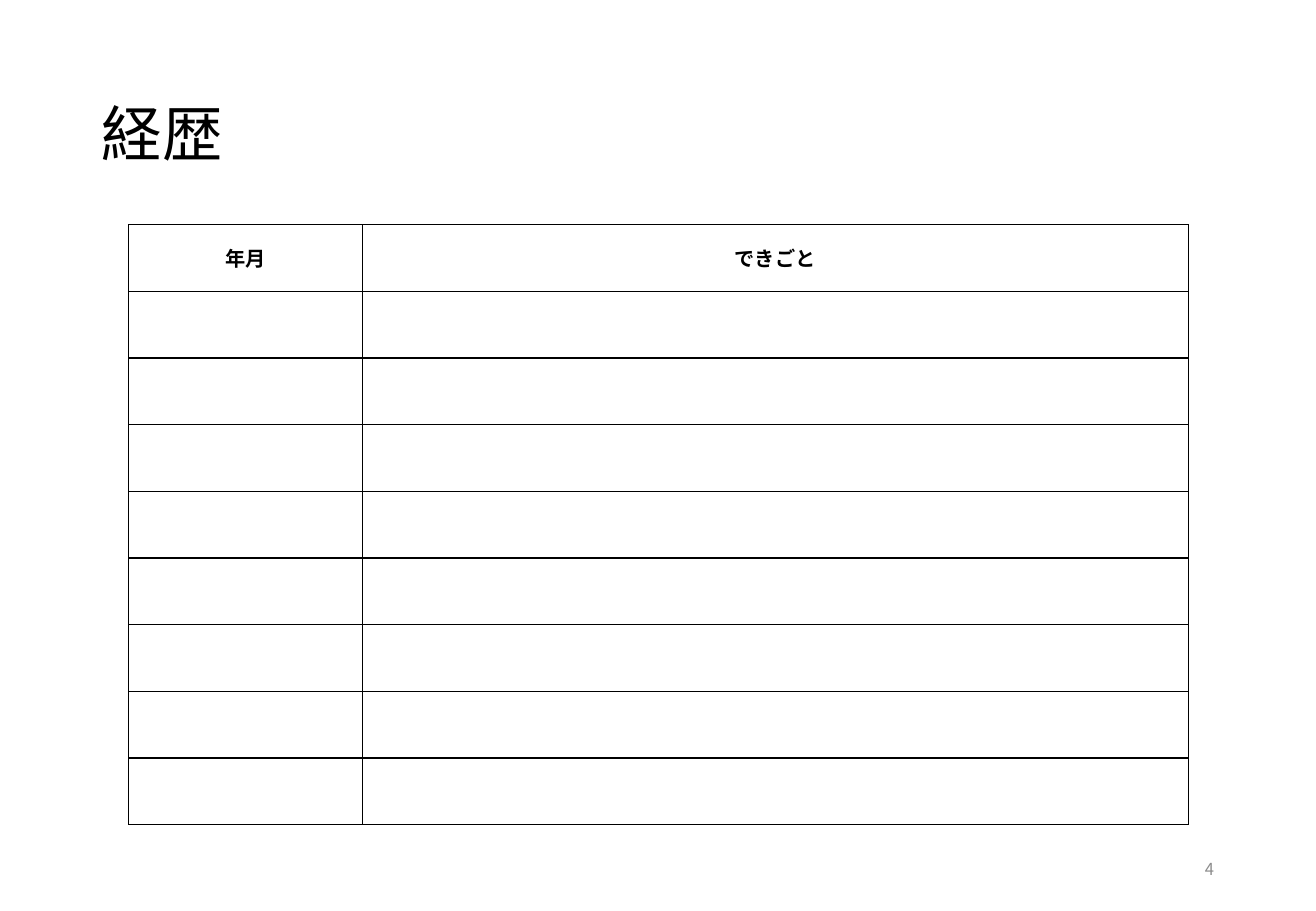
from dataclasses import dataclass

from lxml.etree import SubElement
from pptx import Presentation
from pptx.dml.color import RGBColor
from pptx.enum.text import MSO_ANCHOR as Anchor, PP_ALIGN as Align
from pptx.oxml import parse_xml
from pptx.oxml.ns import nsdecls, qn
from pptx.util import Inches, Pt


@dataclass(frozen=True)
class Theme:
    font: str = "Noto Sans CJK JP"
    ink: str = "000000"
    muted: str = "8C8C8C"
    paper: str = "FFFFFF"
    title_size: float = 35.8
    header_size: float = 12
    number_size: float = 9.8
    border_width: float = 0.75


THEME = Theme()
SLIDE_WIDTH, SLIDE_HEIGHT = 10.83, 7.5

# Table grid, in inches
TABLE_LEFT, TABLE_TOP, TABLE_HEIGHT = 1.06, 1.85, 4.94
COLUMN_WIDTHS = (1.92, 6.8)
HEADERS = ("年月", "できごと")
ROW_COUNT = 9


def format_text(text_frame, size, color, align, bold=False):
    """Style the only paragraph of a text frame."""
    paragraph = text_frame.paragraphs[0]
    paragraph.alignment = align
    for run in paragraph.runs:
        run.font.size = Pt(size)
        run.font.bold = bold
        run.font.color.rgb = RGBColor.from_string(color)
        run.font.name = THEME.font
        SubElement(run.font._element, qn("a:ea"), typeface=THEME.font)
    return paragraph


def add_text(slide, text, box, size, color, align=Align.LEFT):
    shape = slide.shapes.add_textbox(*map(Inches, box))
    text_frame = shape.text_frame
    text_frame.word_wrap = True
    text_frame.vertical_anchor = Anchor.MIDDLE
    text_frame.text = text
    return format_text(text_frame, size, color, align)


def set_borders(cell):
    """Draw all four sides; the lines must come before the fill."""
    properties = cell._tc.get_or_add_tcPr()
    for position, side in enumerate(("lnL", "lnR", "lnT", "lnB")):
        line = parse_xml(
            f'<a:{side} {nsdecls("a")} w="{Pt(THEME.border_width)}">'
            f'<a:solidFill><a:srgbClr val="{THEME.ink}"/></a:solidFill></a:{side}>'
        )
        properties.insert(position, line)


def add_history_table(slide):
    frame = slide.shapes.add_table(
        ROW_COUNT, len(COLUMN_WIDTHS), Inches(TABLE_LEFT), Inches(TABLE_TOP),
        Inches(sum(COLUMN_WIDTHS)), Inches(TABLE_HEIGHT),
    )
    table = frame.table
    table.horz_banding = False
    for column, width in zip(table.columns, COLUMN_WIDTHS):
        column.width = Inches(width)
    for row in table.rows:
        row.height = Inches(TABLE_HEIGHT / ROW_COUNT)
    for cell in table.iter_cells():
        cell.vertical_anchor = Anchor.MIDDLE
        cell.fill.solid()
        cell.fill.fore_color.rgb = RGBColor.from_string(THEME.paper)
        set_borders(cell)
    for cell, header in zip(table.rows[0].cells, HEADERS):
        cell.text_frame.text = header
        format_text(cell.text_frame, THEME.header_size, THEME.ink, Align.CENTER, bold=True)


def main():
    presentation = Presentation()
    presentation.slide_width = Inches(SLIDE_WIDTH)
    presentation.slide_height = Inches(SLIDE_HEIGHT)
    slide = presentation.slides.add_slide(presentation.slide_layouts[6])

    # Title
    title = add_text(slide, "経歴", (0.74, 0.72, 9.34, 0.82), THEME.title_size, THEME.ink)
    title.line_spacing = 0.9

    # Personal history
    add_history_table(slide)

    # Page number
    add_text(slide, "4", (7.65, 6.95, 2.44, 0.4), THEME.number_size, THEME.muted, Align.RIGHT)

    presentation.save("out.pptx")


if __name__ == "__main__":
    main()
